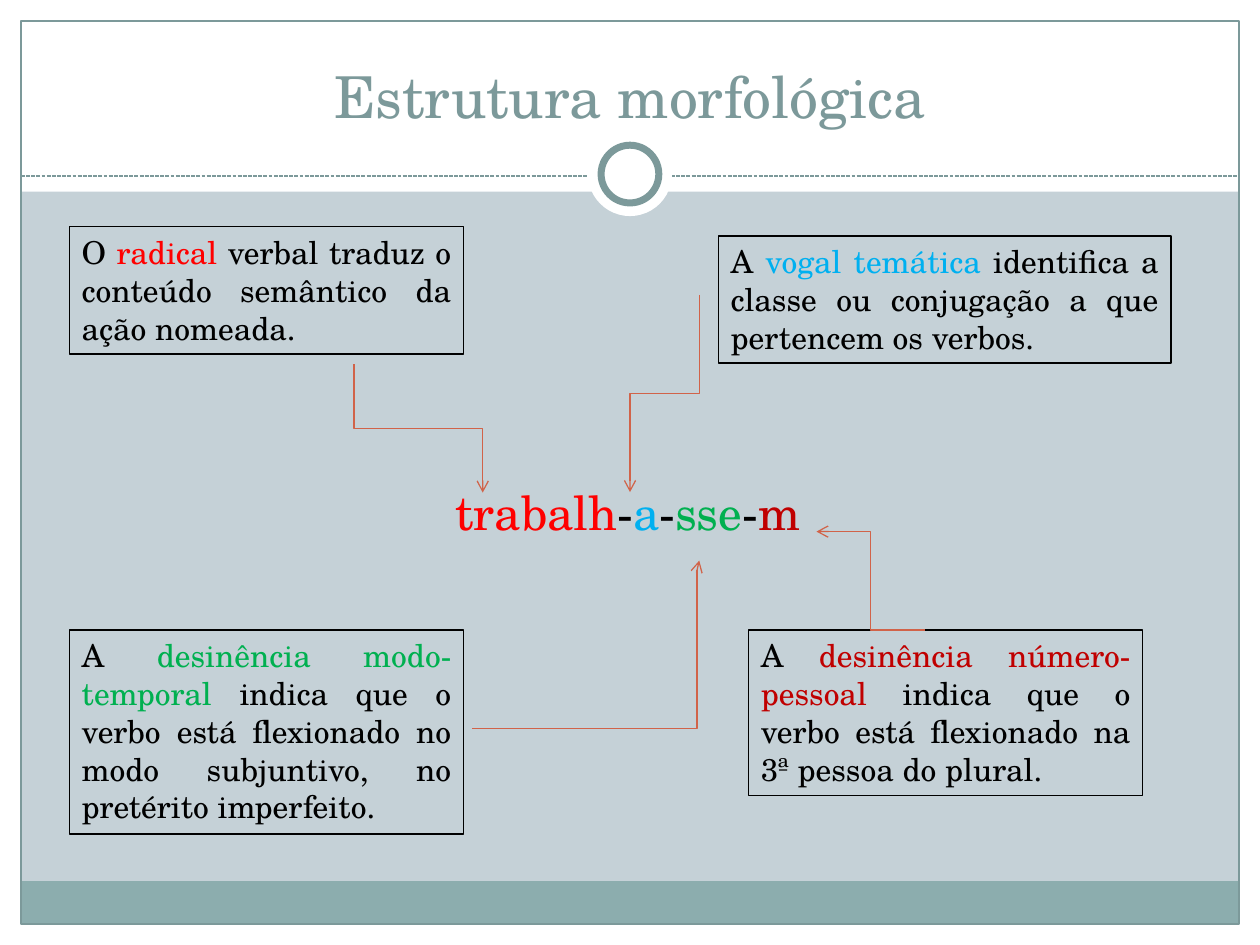
from lxml.etree import SubElement
from pptx import Presentation
from pptx.dml.color import RGBColor
from pptx.enum.dml import MSO_LINE
from pptx.enum.shapes import MSO_CONNECTOR, MSO_SHAPE
from pptx.enum.text import MSO_ANCHOR, MSO_AUTO_SIZE, PP_ALIGN
from pptx.oxml.ns import qn
from pptx.util import Pt

FONT = "TeX Gyre Schola"
BLACK = RGBColor(0, 0, 0)
WHITE = RGBColor(0xFF, 0xFF, 0xFF)
GROUND = RGBColor(0xC5, 0xD1, 0xD7)
BAND = RGBColor(0x8C, 0xAD, 0xAE)
TEAL = RGBColor(0x7C, 0x99, 0x9A)
RUST = RGBColor(0xD1, 0x63, 0x49)
RED = RGBColor(0xFF, 0, 0)
BLUE = RGBColor(0, 0xB0, 0xF0)
GREEN = RGBColor(0, 0xB0, 0x50)
WINE = RGBColor(0xC0, 0, 0)

WIDE, HIGH = 720, 540
EDGE = 12
NOTES = [
    ((39.6, 129.6, 225.4, 72.7),
     [("O ", BLACK), ("radical ", RED),
      ("verbal traduz o conteúdo semântico da ação nomeada.", BLACK)]),
    ((410.4, 134.8, 258.8, 72.7),
     [("A ", BLACK), ("vogal temática ", BLUE),
      ("identifica a classe ou conjugação a que pertencem os verbos.", BLACK)]),
    ((39.6, 360, 225.4, 116.6),
     [("A ", BLACK), ("desinência modo-temporal", GREEN),
      (" indica que o verbo está flexionado no modo subjuntivo, "
       "no pretérito imperfeito.", BLACK)]),
    ((427.7, 360, 225.4, 94.5),
     [("A ", BLACK), ("desinência número-pessoal ", WINE),
      ("indica que o verbo está flexionado na 3ª pessoa do plural.", BLACK)]),
]
WORD = [("trabalh", RED), ("-", BLACK), ("a", BLUE), ("-", BLACK),
        ("sse", GREEN), ("-", BLACK), ("m", WINE)]
# start, end, whether the arrow leaves downwards, place of the bend
ARROWS = [
    ((202.3, 208.1), (275.8, 281.5), True, 0.5),
    ((399.6, 168.5), (360, 281.2), True, 0.5),
    ((528.5, 360), (466.6, 303.8), False, 0.5),
    ((270, 416.2), (399.6, 320.4), False, 0.99),
]


def write(frame, runs, size, align):
    """Put coloured runs in the first paragraph."""
    para = frame.paragraphs[0]
    para.alignment = align
    para.space_before = Pt(0)
    for text, color in runs:
        run = para.add_run()
        run.text = text
        for name, value in {"name": FONT, "size": Pt(size)}.items():
            setattr(run.font, name, value)
        run.font.color.rgb = color
    return para


def add_form(slide, kind, box, fill=None, line=None, weight=0.75):
    """Draw a preset shape without shadow."""
    form = slide.shapes.add_shape(kind, *map(Pt, box))
    form.shadow.inherit = False
    if fill is None:
        form.fill.background()
    else:
        form.fill.solid()
        form.fill.fore_color.rgb = fill
    if line is None:
        form.line.fill.background()
    else:
        form.line.color.rgb = line
        form.line.width = Pt(weight)


def add_line(slide, kind, start, end, color):
    """Draw a thin connector without shadow."""
    line = slide.shapes.add_connector(kind, *map(Pt, start + end))
    line.line.color.rgb = color
    line.line.width = Pt(0.75)
    SubElement(line._element.spPr, qn("a:effectLst"))
    return line


def add_arrow(slide, start, end, down, bend):
    """Draw an elbow arrow; one that leaves downwards is a turned elbow."""
    (x1, y1), (x2, y2) = start, end
    first, last = start, end
    if down:
        mx, my = (x1 + x2) / 2, (y1 + y2) / 2
        dx, dy = abs(y2 - y1) / 2, abs(x2 - x1) / 2
        first, last = (mx - dx, my - dy), (mx + dx, my + dy)
    arrow = add_line(slide, MSO_CONNECTOR.ELBOW, first, last, RUST)
    if down:
        xfrm = arrow._element.spPr.find(qn("a:xfrm"))
        xfrm.set("rot", str((270 if x2 > x1 else 90) * 60000))
        if x2 > x1:
            xfrm.set("flipH", "1")
    geom = arrow._element.spPr.find(qn("a:prstGeom"))
    guides = geom.get_or_add_avLst()
    SubElement(guides, qn("a:gd"), name="adj1", fmla=f"val {round(bend * 100000)}")
    SubElement(arrow.line._get_or_add_ln(), qn("a:tailEnd"), type="arrow")


def add_note(slide, box, runs):
    """Add an outlined, justified text box."""
    note = slide.shapes.add_textbox(*map(Pt, box))
    note.line.color.rgb = BLACK
    note.line.width = Pt(0.75)
    note.text_frame.word_wrap = True
    note.text_frame.auto_size = MSO_AUTO_SIZE.SHAPE_TO_FIT_TEXT
    write(note.text_frame, runs, 18, PP_ALIGN.JUSTIFY)


def add_frame(slide):
    """Draw the page border, bands and ring."""
    rect, oval = MSO_SHAPE.RECTANGLE, MSO_SHAPE.OVAL
    inner = WIDE - 2 * EDGE
    for box in [(0, HIGH - EDGE, WIDE, EDGE), (0, 0, WIDE, 109.5),
                (0, 0, EDGE, HIGH), (WIDE - EDGE, 0, EDGE, HIGH)]:
        add_form(slide, rect, box, WHITE)
    add_form(slide, rect, (EDGE, 503.5, inner, 24.5), BAND)
    add_form(slide, rect, (EDGE, EDGE, inner, HIGH - 2 * EDGE), line=TEAL)
    rule = add_line(slide, MSO_CONNECTOR.STRAIGHT,
                    (EDGE, 100.6), (WIDE - EDGE, 100.6), TEAL)
    rule.line.dash_style = MSO_LINE.SQUARE_DOT
    for size, line in [(48, None), (33, TEAL)]:
        box = ((WIDE - size) / 2, 99.5 - size / 2, size, size)
        add_form(slide, oval, box, WHITE, line, 4)


def fill_holder(slide, holder, box, runs, size, **formats):
    """Move a placeholder to the front, format it and fill it."""
    slide.shapes._spTree.append(holder._element)
    for name, value in zip(("left", "top", "width", "height"), box):
        setattr(holder, name, Pt(value))
    frame = holder.text_frame
    formats = {"word_wrap": True, "auto_size": MSO_AUTO_SIZE.NONE, **formats}
    for name, value in formats.items():
        setattr(frame, name, value)
    return write(frame, runs, size, PP_ALIGN.CENTER)


def main():
    deck = Presentation()
    deck.slide_width, deck.slide_height = Pt(WIDE), Pt(HIGH)
    slide = deck.slides.add_slide(deck.slide_layouts[1])
    slide.background.fill.solid()
    slide.background.fill.fore_color.rgb = GROUND
    title, body = slide.placeholders
    add_frame(slide)

    # Title and the split verb
    fill_holder(slide, title, (24, 18, 672, 60),
                [("Estrutura morfológica", TEAL)], 33,
                vertical_anchor=MSO_ANCHOR.BOTTOM)
    verb = fill_holder(slide, body, (24, 120, 669.6, 360), WORD, 27,
                       vertical_anchor=MSO_ANCHOR.TOP, margin_top=Pt(156))
    props = verb._p.get_or_add_pPr()
    props.set("marL", "0")
    props.set("indent", "0")
    SubElement(props, qn("a:buNone"))

    # Explanations and their arrows
    for box, runs in NOTES:
        add_note(slide, box, runs)
    for arrow in ARROWS:
        add_arrow(slide, *arrow)
    deck.save("out.pptx")


if __name__ == "__main__":
    main()
